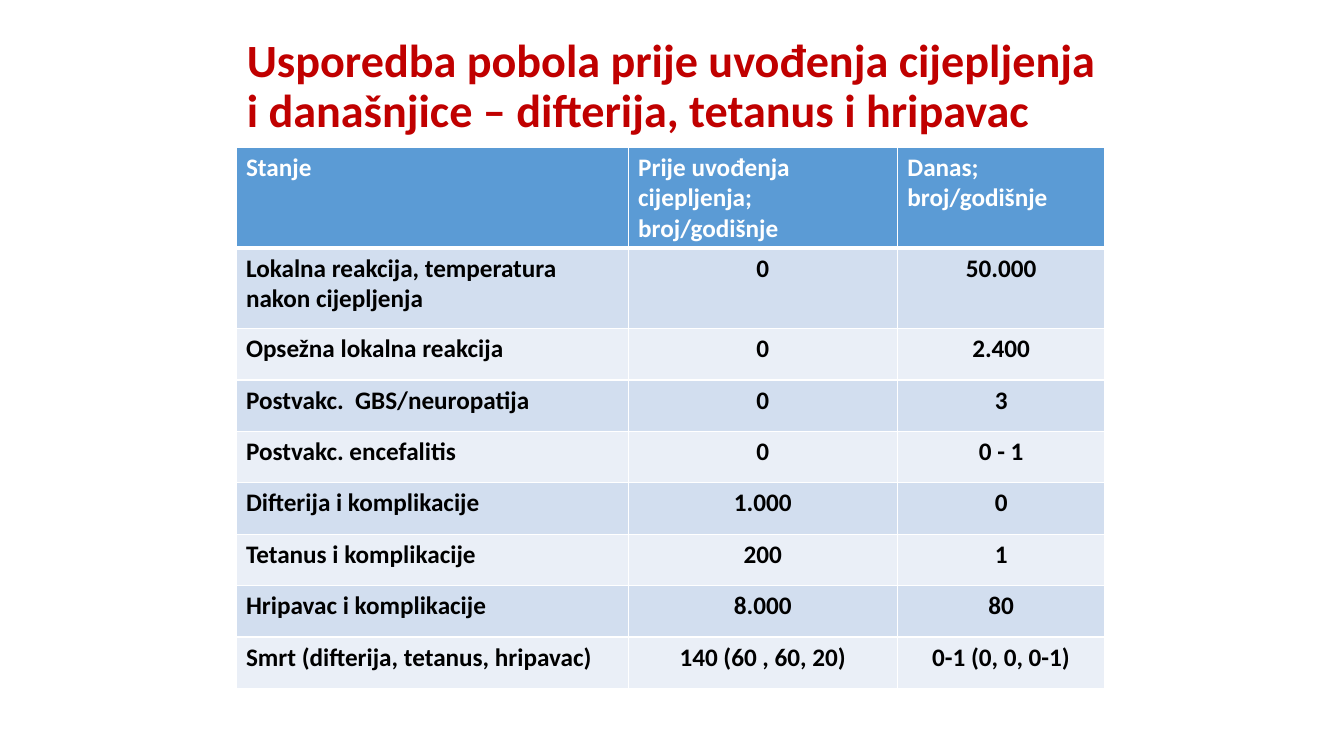
from dataclasses import dataclass

from lxml import etree
from pptx import Presentation
from pptx import util as u
from pptx.dml.color import RGBColor
from pptx.enum import text
from pptx.oxml import ns

EMU_PER_PX = 9144


@dataclass(frozen=True)
class Theme:
    font: str = "Calibri"
    title: str = "C00000"
    header: str = "5B9BD5"
    bands: tuple = ("D2DEEF", "EAEFF7")
    ink: str = "000000"
    white: str = "FFFFFF"
    title_pt: int = 33
    body_pt: int = 18
    rule_pt: int = 1
    header_rule_pt: int = 3


HEADINGS = ["Stanje", "Prije uvođenja cijepljenja; broj/godišnje", "Danas; broj/godišnje"]
CONDITIONS = [
    ["Lokalna reakcija, temperatura nakon cijepljenja", "0", "50.000"],
    ["Opsežna lokalna reakcija", "0", "2.400"],
    ["Postvakc.  GBS/neuropatija", "0", "3"],
    ["Postvakc. encefalitis", "0", "0 - 1"],
    ["Difterija i komplikacije", "1.000", "0"],
    ["Tetanus i komplikacije", "200", "1"],
    ["Hripavac i komplikacije", "8.000", "80"],
    ["Smrt (difterija, tetanus, hripavac)", "140 (60 , 60, 20)", "0-1 (0, 0, 0-1)"],
]


def px(n):
    return u.Emu(n * EMU_PER_PX)


class Deck:
    def __init__(self, theme, width, height):
        self.theme = theme
        self.prs = Presentation()
        self.prs.slide_width, self.prs.slide_height = px(width), px(height)
        self.s = self.prs.slides.add_slide(self.prs.slide_layouts[6])

    def style(self, p, size, color):
        for r in p.runs:
            r.font.name = self.theme.font
            r.font.size = u.Pt(size)
            r.font.bold = True
            r.font.color.rgb = RGBColor.from_string(color)

    def title(self, words, x, y, w, h):
        tf = self.s.shapes.add_textbox(px(x), px(y), px(w), px(h)).text_frame
        tf.word_wrap = True
        tf.vertical_anchor = text.MSO_ANCHOR.MIDDLE
        tf.text = words
        p = tf.paragraphs[0]
        p.line_spacing = 0.9
        self.style(p, self.theme.title_pt, self.theme.title)

    def border(self, cell, side, width):
        ln = etree.SubElement(cell._tc.get_or_add_tcPr(), ns.qn(f"a:ln{side}"), w=str(u.Pt(width)))
        fill = etree.SubElement(ln, ns.qn("a:solidFill"))
        etree.SubElement(fill, ns.qn("a:srgbClr"), val=self.theme.white)

    def cell(self, cell, words, row, col):
        t = self.theme
        heavy_side = {0: "B", 1: "T"}.get(row)
        for side in "LRTB":
            self.border(cell, side, t.header_rule_pt if side == heavy_side else t.rule_pt)
        cell.fill.solid()
        fill = t.bands[(row - 1) % 2] if row else t.header
        cell.fill.fore_color.rgb = RGBColor.from_string(fill)
        cell.text_frame.text = words
        p = cell.text_frame.paragraphs[0]
        if row and col:
            p.alignment = text.PP_ALIGN.CENTER
        self.style(p, t.body_pt, t.ink if row else t.white)

    def table(self, rows, x, y, widths, heights):
        frame = self.s.shapes.add_table(
            len(rows), len(widths), px(x), px(y), px(sum(widths)), px(sum(heights)))
        tbl = frame.table
        tbl.horz_banding = False
        for column, width in zip(tbl.columns, widths):
            column.width = px(width)
        for i, (words, height) in enumerate(zip(rows, heights)):
            tbl.rows[i].height = px(height)
            for j, word in enumerate(words):
                self.cell(tbl.cell(i, j), word, i, j)


def main():
    deck = Deck(Theme(), 1333, 750)
    deck.title("Usporedba pobola prije uvođenja cijepljenja i današnjice – difterija, tetanus i hripavac",
               235, 40, 862, 93)
    deck.table([HEADINGS] + CONDITIONS, 234, 146, [389, 267, 206], [100, 80] + [51] * 7)
    deck.prs.save("out.pptx")


if __name__ == "__main__":
    main()
